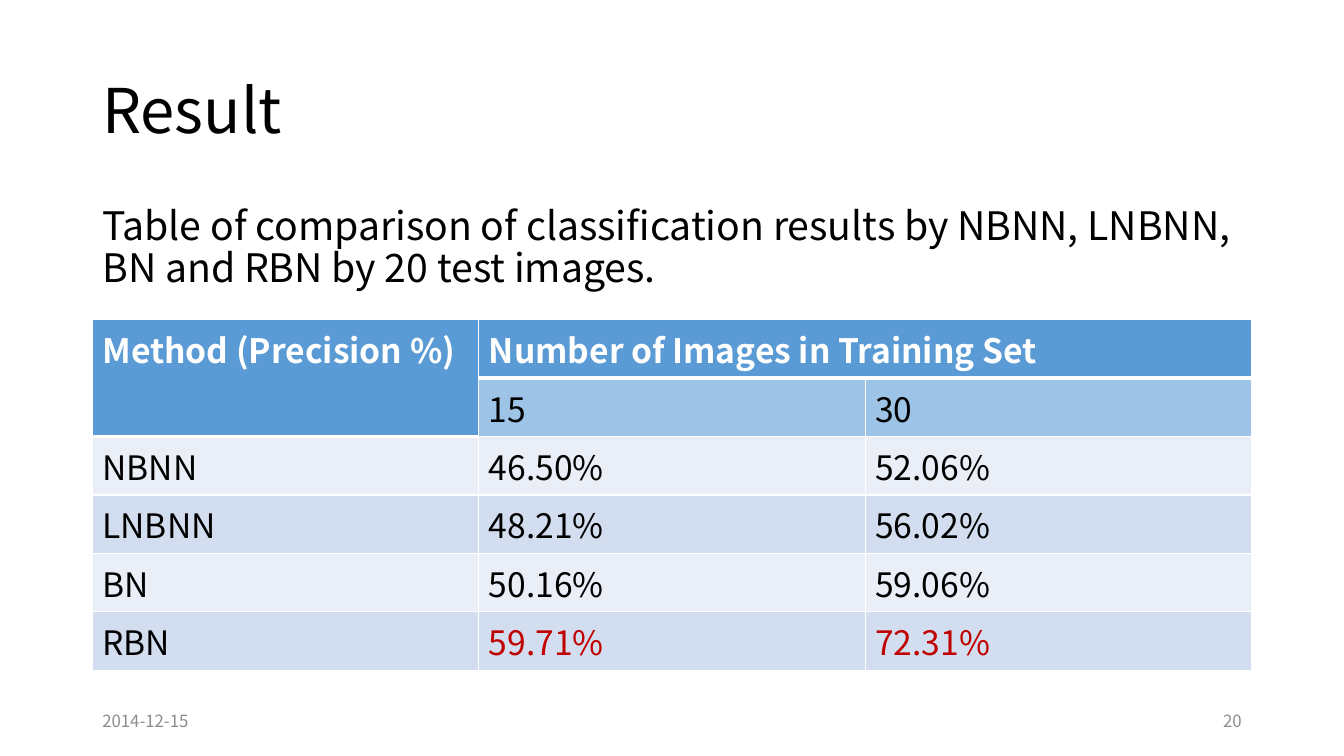
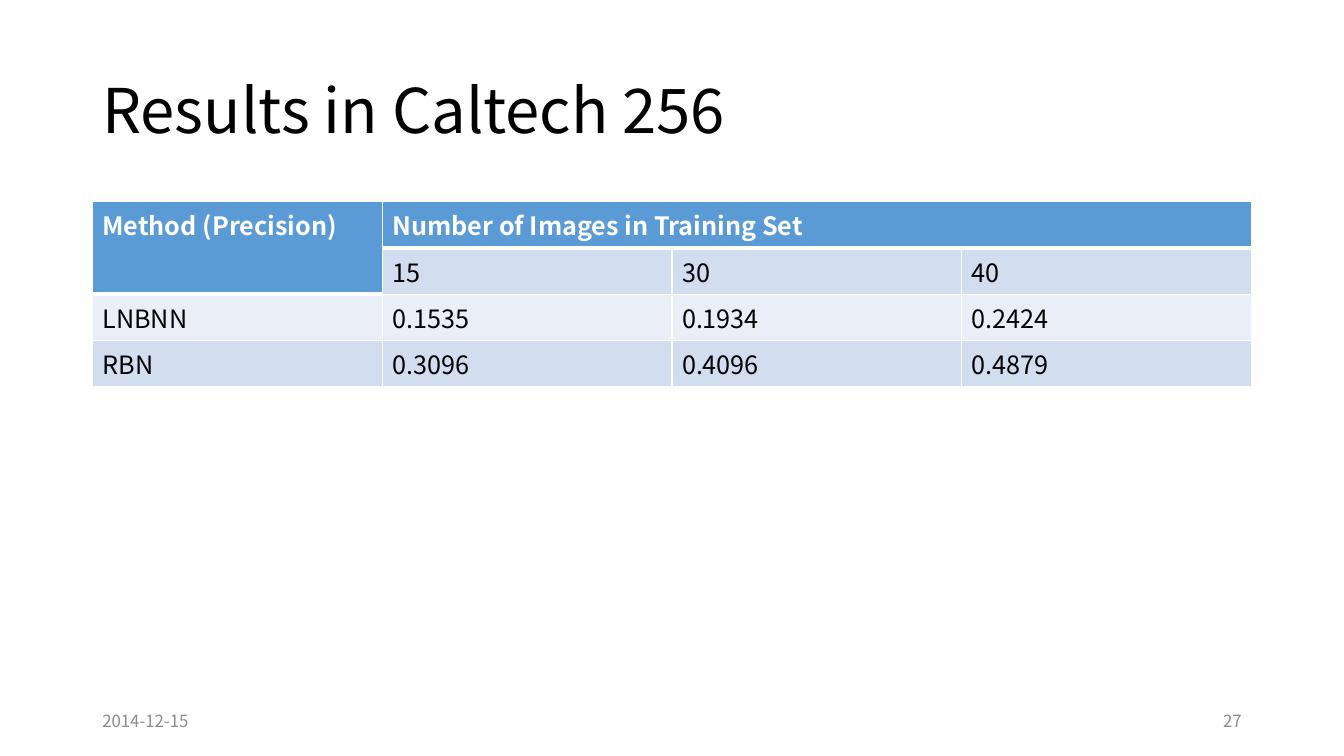
import dataclasses
import typing

import pptx
import pptx.dml.color
import pptx.enum.text
import pptx.oxml.ns
import pptx.presentation
import pptx.slide
import pptx.table
import pptx.text.text
import pptx.util
from lxml import etree

# Slide grid: 16 columns by 15 rows
SLIDE_W, SLIDE_H = pptx.util.Inches(13.333), pptx.util.Inches(7.5)
COLUMN, ROW = SLIDE_W / 16, SLIDE_H / 15
LEFT, WIDTH = 1.1, 13.8
FOOTER_TOP, FOOTER_WIDTH, FOOTER_HEIGHT = 13.9, 3.6, 0.8
BODY_TOP = 4

# Shared look
FONT = "Noto Sans CJK KR"
BLACK, WHITE, GREY, RED = "000000", "FFFFFF", "8C8C8C", "C00000"
HEADER, SUBHEADER = "5B9BD5", "9DC3E6"
BAND_DARK, BAND_LIGHT = "D2DEEF", "EAEFF7"
THIN, THICK = 1, 3
DATE = "2014-12-15"


@dataclasses.dataclass(frozen=True)
class Area:
    """A place on the slide, in grid columns and rows."""
    left: float
    top: float
    width: float
    height: float

    def emu(self) -> tuple[int, int, int, int]:
        return (round(self.left * COLUMN), round(self.top * ROW),
                round(self.width * COLUMN), round(self.height * ROW))


@dataclasses.dataclass(frozen=True)
class TextStyle:
    size: float
    color: str = BLACK
    bold: bool = False
    paragraph: dict[str, typing.Any] = dataclasses.field(default_factory=dict)


@dataclasses.dataclass(frozen=True)
class ResultTable:
    top: float
    row_height: float
    size: float
    method_heading: str
    set_sizes: list[str]
    results: list[list[str]]
    subheader_fill: str
    highlighted: str = ""


@dataclasses.dataclass(frozen=True)
class ResultSlide:
    title: str
    number: str
    table: ResultTable
    intro: str = ""


TITLE = TextStyle(44, paragraph={"line_spacing": 0.9})
INTRO = TextStyle(28, paragraph={"line_spacing": 0.9,
                                 "space_before": pptx.util.Pt(10)})
FOOTER = TextStyle(12, GREY)
PAGE_NUMBER = TextStyle(12, GREY, paragraph={
    "alignment": pptx.enum.text.PP_ALIGN.RIGHT})

SLIDES = [
    ResultSlide(
        "Result", "20",
        ResultTable(
            6.34, 1.16, 24, "Method (Precision %)", ["15", "30"],
            [["NBNN", "46.50%", "52.06%"],
             ["LNBNN", "48.21%", "56.02%"],
             ["BN", "50.16%", "59.06%"],
             ["RBN", "59.71%", "72.31%"]],
            SUBHEADER, highlighted="RBN"),
        intro="Table of comparison of classification results by NBNN, LNBNN, "
              "BN and RBN by 20 test images."),
    ResultSlide(
        "Results in Caltech 256", "27",
        ResultTable(
            BODY_TOP, 0.92, 18, "Method (Precision)", ["15", "30", "40"],
            [["LNBNN", "0.1535", "0.1934", "0.2424"],
             ["RBN", "0.3096", "0.4096", "0.4879"]],
            BAND_DARK)),
]


def rgb(color: str) -> pptx.dml.color.RGBColor:
    return pptx.dml.color.RGBColor.from_string(color)


def write(frame: pptx.text.text.TextFrame, text: str, style: TextStyle) -> None:
    paragraph = frame.paragraphs[0]
    for name, value in style.paragraph.items():
        setattr(paragraph, name, value)
    run = paragraph.add_run()
    run.text = text
    font_format = {"name": FONT, "size": pptx.util.Pt(style.size),
                   "bold": style.bold}
    for name, value in font_format.items():
        setattr(run.font, name, value)
    run.font.color.rgb = rgb(style.color)


def add_text(slide: pptx.slide.Slide, area: Area, text: str, style: TextStyle,
             anchor: typing.Any = pptx.enum.text.MSO_ANCHOR.MIDDLE) -> None:
    frame = slide.shapes.add_textbox(*area.emu()).text_frame
    frame.word_wrap = True
    frame.vertical_anchor = anchor
    write(frame, text, style)


def set_borders(cell: pptx.table._Cell, top: float, bottom: float) -> None:
    properties = cell._tc.get_or_add_tcPr()
    widths = {"a:lnL": THIN, "a:lnR": THIN, "a:lnT": top, "a:lnB": bottom}
    for tag, width in widths.items():
        line = etree.SubElement(properties, pptx.oxml.ns.qn(tag),
                                w=str(pptx.util.Pt(width)))
        fill = etree.SubElement(line, pptx.oxml.ns.qn("a:solidFill"))
        etree.SubElement(fill, pptx.oxml.ns.qn("a:srgbClr"), val=WHITE)


def cell_look(data: ResultTable, row: int, column: int) -> tuple[str, TextStyle]:
    """Fill and text style of one cell."""
    if row == 0 or (row == 1 and column == 0):
        return HEADER, TextStyle(data.size, WHITE, bold=True)
    if row == 1:
        return data.subheader_fill, TextStyle(data.size)
    marked = column > 0 and data.results[row - 2][0] == data.highlighted
    return (BAND_DARK if row % 2 else BAND_LIGHT,
            TextStyle(data.size, RED if marked else BLACK))


def add_results(slide: pptx.slide.Slide, data: ResultTable) -> None:
    texts = [[data.method_heading, "Number of Images in Training Set"]
             + [""] * (len(data.set_sizes) - 1),
             ["", *data.set_sizes], *data.results]
    row_count, column_count = len(texts), len(texts[0])
    area = Area(LEFT, data.top, WIDTH, data.row_height * row_count)
    table = slide.shapes.add_table(row_count, column_count, *area.emu()).table

    # The method heading spans two rows, the training set heading the rest
    table.cell(0, 0).merge(table.cell(1, 0))
    table.cell(0, 1).merge(table.cell(0, column_count - 1))

    for row, line in enumerate(texts):
        for column, text in enumerate(line):
            cell = table.cell(row, column)
            header_end = 0 if column else 1
            set_borders(cell,
                        top=THICK if row == header_end + 1 else THIN,
                        bottom=THICK if row in (0, header_end) else THIN)
            fill, style = cell_look(data, row, column)
            cell.fill.solid()
            cell.fill.fore_color.rgb = rgb(fill)
            if text:
                write(cell.text_frame, text, style)


def add_result_slide(deck: pptx.presentation.Presentation,
                     content: ResultSlide) -> None:
    slide = deck.slides.add_slide(deck.slide_layouts[6])
    add_text(slide, Area(LEFT, 0.8, WIDTH, 2.9), content.title, TITLE)
    if content.intro:
        add_text(slide, Area(LEFT, BODY_TOP, WIDTH, 2.2), content.intro, INTRO,
                 pptx.enum.text.MSO_ANCHOR.TOP)
    add_results(slide, content.table)

    # Footer: date on the left, page number on the right
    number_left = LEFT + WIDTH - FOOTER_WIDTH
    for left, text, style in ((LEFT, DATE, FOOTER),
                              (number_left, content.number, PAGE_NUMBER)):
        add_text(slide, Area(left, FOOTER_TOP, FOOTER_WIDTH, FOOTER_HEIGHT),
                 text, style)


def main() -> None:
    deck = pptx.Presentation()
    deck.slide_width, deck.slide_height = SLIDE_W, SLIDE_H
    for content in SLIDES:
        add_result_slide(deck, content)
    deck.save("out.pptx")


if __name__ == "__main__":
    main()
